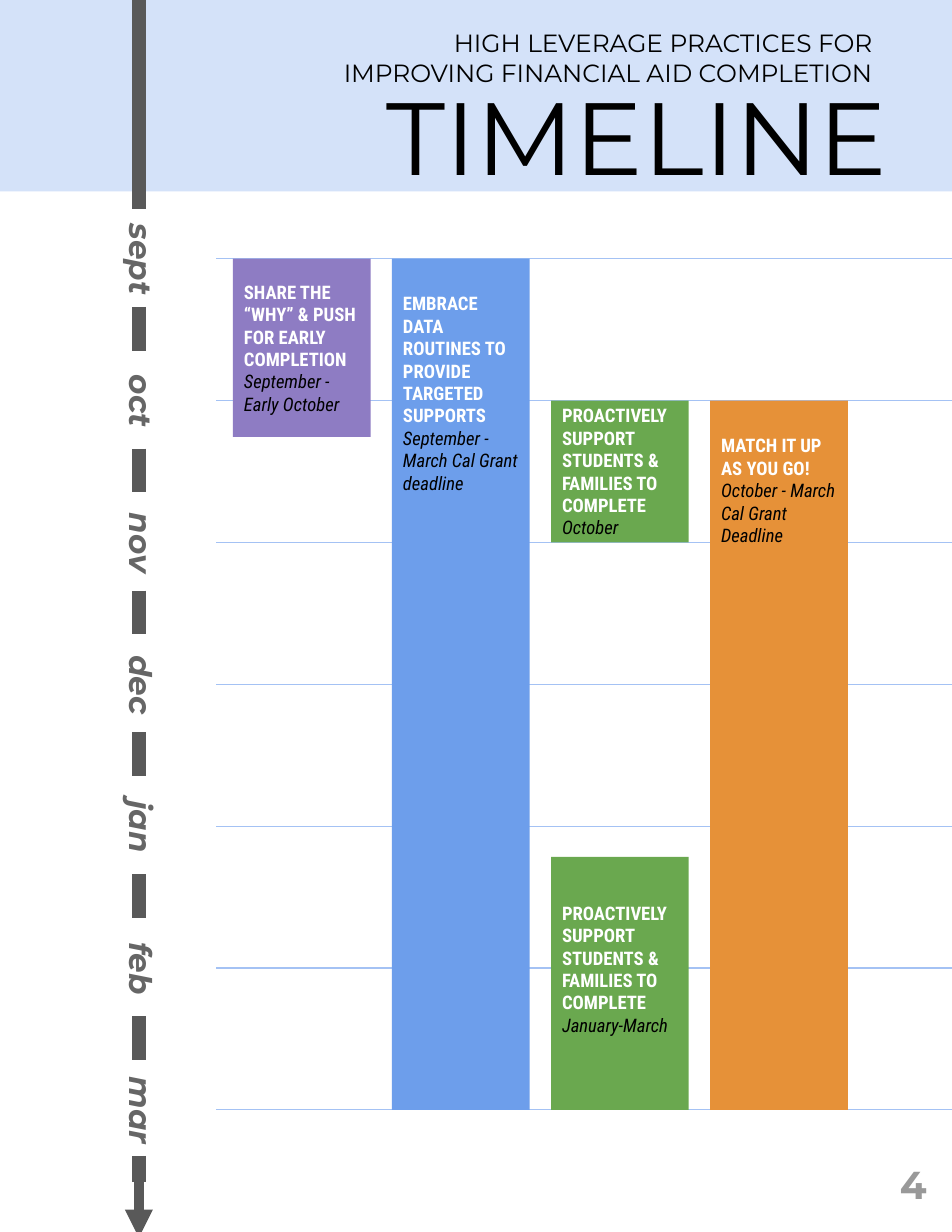
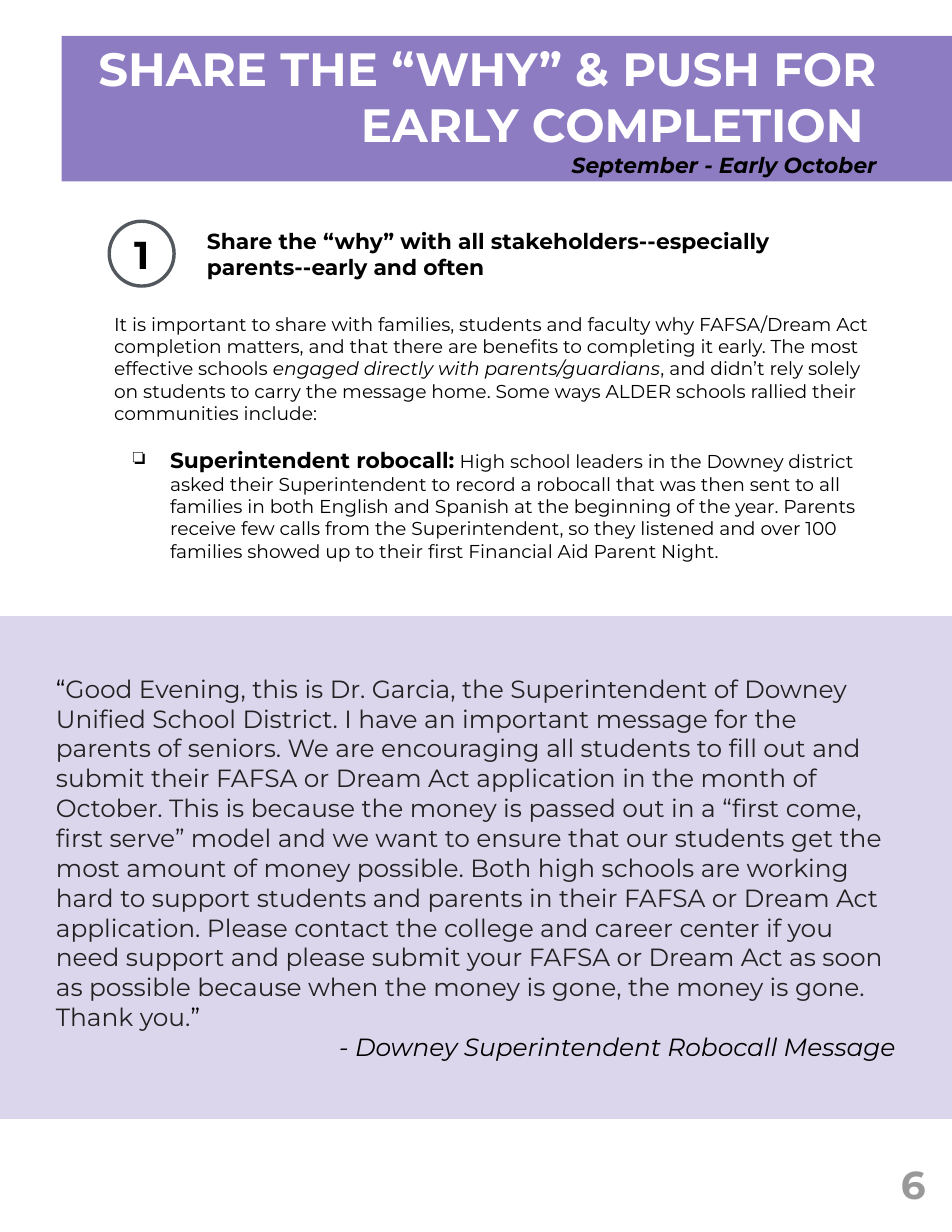
from lxml.etree import SubElement
from pptx import Presentation
from pptx.dml.color import RGBColor
from pptx.enum.shapes import MSO_CONNECTOR, MSO_SHAPE
from pptx.enum.text import MSO_ANCHOR, PP_ALIGN
from pptx.oxml.ns import qn
from pptx.util import Inches, Pt

PURPLE, BLUE, GREEN, ORANGE = "8E7CC3", "6D9EEB", "6AA84F", "E69138"
PALE_BLUE, SPINE, RING = "A4C2F4", "595959", "53585F"
BLACK, INK, WHITE, MONTH_GRAY, PAGE_GRAY = "000000", "222222", "FFFFFF", "666666", "999999"
HEADING_FONT, BAR_FONT = "Montserrat", "Roboto Condensed"
MONTHS = ["sept", "oct", "nov", "dec", "jan", "feb", "mar"]
GRID_TOP, GRID_BOTTOM = 2.31, 9.91
MONTH_STEP = (GRID_BOTTOM - GRID_TOP) / (len(MONTHS) - 1)
SPINE_X = 1.24
LEFT, CENTER, RIGHT = PP_ALIGN.LEFT, PP_ALIGN.CENTER, PP_ALIGN.RIGHT
TOP, MIDDLE = MSO_ANCHOR.TOP, MSO_ANCHOR.MIDDLE


def color(value):
    """Turn a hex string into a colour."""
    return RGBColor.from_string(value)


def piece(text, size, ink=BLACK, bold=False, italic=False, font=HEADING_FONT):
    """Describe one evenly styled stretch of text."""
    return text, size, ink, bold, italic, font


def write(shape, paragraphs, align=LEFT, anchor=TOP, insets=(0.1, 0.1, 0.1, 0.1)):
    """Fill a shape with paragraphs, each a list of pieces."""
    frame = shape.text_frame
    frame.word_wrap = True
    frame.vertical_anchor = anchor
    frame.margin_left, frame.margin_top, frame.margin_right, frame.margin_bottom = map(Inches, insets)
    for index, pieces in enumerate(paragraphs):
        paragraph = frame.add_paragraph() if index else frame.paragraphs[0]
        paragraph.alignment = align
        for text, size, ink, bold, italic, font in pieces:
            run = paragraph.add_run()
            run.text = text
            run.font.size = Pt(size)
            run.font.name = font
            run.font.bold = bold
            run.font.italic = italic
            run.font.color.rgb = color(ink)
    return frame


def add_text(slide, box, paragraphs, **layout):
    """Add a text box."""
    label = slide.shapes.add_textbox(*map(Inches, box))
    write(label, paragraphs, **layout)
    return label


def add_block(slide, box, fill, opacity=100, kind=MSO_SHAPE.RECTANGLE):
    """Add a filled shape without outline."""
    block = slide.shapes.add_shape(kind, *map(Inches, box))
    block.shadow.inherit = False
    block.line.fill.background()
    block.fill.solid()
    block.fill.fore_color.rgb = color(fill)
    if opacity < 100:
        tint = block.fill._xPr.find(qn("a:solidFill"))[0]
        SubElement(tint, qn("a:alpha"), val=str(opacity * 1000))
    return block


def add_line(slide, start, end, ink, width, arrow=False):
    """Add a straight line, with an arrowhead at its end if wanted."""
    line = slide.shapes.add_connector(MSO_CONNECTOR.STRAIGHT, *map(Inches, start + end))
    line.line.color.rgb = color(ink)
    line.line.width = Pt(width)
    if arrow:
        SubElement(line.line._get_or_add_ln(), qn("a:tailEnd"), type="triangle")
    SubElement(line._element.spPr, qn("a:effectLst"))


def add_spine(slide, top, bottom, width=9, arrow=False):
    """Add one upright stretch of the month axis."""
    add_line(slide, (SPINE_X, top), (SPINE_X, bottom), SPINE, width, arrow)


def add_bar(slide, column, top, bottom, fill, practice, period, inset, anchor=TOP):
    """Add one practice bar in its column."""
    bar = add_block(slide, (2.08 + 1.42 * column, top, 1.23, bottom - top), fill)
    paragraphs = [
        [piece(practice, 12, WHITE, bold=True, font=BAR_FONT)],
        [piece(period, 12, italic=True, font=BAR_FONT)],
    ]
    write(bar, paragraphs, anchor=anchor, insets=(0.1, inset, 0.1, inset if anchor == MIDDLE else 0))


def add_page_number(slide, number):
    """Add the page number in the lower right corner."""
    add_text(slide, (7.81, 10.15, 0.69, 0.85), [[piece(number, 25, PAGE_GRAY, bold=True)]],
             align=CENTER, anchor=MIDDLE)


def set_indent(paragraph, left, first=0.0, bullet=None):
    """Indent a paragraph and give it a bullet if wanted."""
    properties = paragraph._p.get_or_add_pPr()
    properties.set("marL", str(Inches(left)))
    properties.set("indent", str(Inches(first)))
    if bullet:
        bullet_ink = SubElement(properties, qn("a:buClr"))
        SubElement(bullet_ink, qn("a:srgbClr"), val=BLACK)
        SubElement(properties, qn("a:buChar"), char=bullet)


def build_timeline(slide):
    """Build the month-by-month timeline."""
    add_block(slide, (0, 0, 8.5, 1.71), PALE_BLUE, opacity=47)
    for index, month in enumerate(MONTHS):
        offset = index * MONTH_STEP
        label = add_text(slide, (0.24, 2.02 + offset, 1.99, 0.59),
                         [[piece(month, 20, MONTH_GRAY, bold=True, italic=True)]], align=CENTER)
        label.rotation = 90
        add_line(slide, (1.93, GRID_TOP + offset), (8.5, GRID_TOP + offset), PALE_BLUE, 0.75)
        if index < len(MONTHS) - 1:
            add_spine(slide, 2.74 + offset, 3.13 + offset)
    add_spine(slide, 0, 1.87)
    add_spine(slide, 10.32, 11.05, width=6, arrow=True)
    add_spine(slide, 10.32, 10.55)

    title_insets = (0.1, 0.05, 0.1, 0.05)
    add_text(slide, (2.82, 0.6, 5.2, 0.67), [[piece("TIMELINE", 66)]], align=RIGHT, insets=title_insets)
    add_text(slide, (2.69, 0.2, 5.2, 0.2),
             [[piece("HIGH LEVERAGE PRACTICES FOR IMPROVING FINANCIAL AID COMPLETION", 16)]],
             align=RIGHT, insets=title_insets)

    october, november = GRID_TOP + MONTH_STEP, GRID_TOP + 2 * MONTH_STEP
    support = "PROACTIVELY SUPPORT STUDENTS & FAMILIES TO COMPLETE"
    add_bar(slide, 0, GRID_TOP, 3.9, PURPLE, "SHARE THE “WHY” & PUSH FOR EARLY COMPLETION",
            "September - Early October", 0.1, MIDDLE)
    add_bar(slide, 1, GRID_TOP, GRID_BOTTOM, BLUE, "EMBRACE DATA ROUTINES TO PROVIDE TARGETED SUPPORTS",
            "September - March Cal Grant deadline", 0.3)
    add_bar(slide, 2, october, november, GREEN, support, "October", 0, MIDDLE)
    add_bar(slide, 2, 7.65, GRID_BOTTOM, GREEN, support, "January-March", 0.4)
    add_bar(slide, 3, october, GRID_BOTTOM, ORANGE, "MATCH IT UP AS YOU GO!",
            "October - March Cal Grant Deadline", 0.3)
    add_page_number(slide, "4")


def build_practice(slide):
    """Build the page on the first practice."""
    banner = add_block(slide, (0.55, 0.32, 7.95, 1.3), PURPLE)
    write(banner, [
        [piece("SHARE THE “WHY” & PUSH FOR EARLY COMPLETION ", 30, WHITE, bold=True)],
        [piece("September - Early October", 14, bold=True, italic=True)],
    ], align=RIGHT, anchor=MIDDLE, insets=(0.1, 0.1, 0.67, 0.1))

    ring = add_block(slide, (0.96, 1.96, 0.61, 0.61), RING, kind=MSO_SHAPE.DONUT)
    ring.adjustments[0] = 0.05
    add_text(slide, (0.92, 1.84, 0.69, 0.85), [[piece("1", 25, bold=True)]], align=CENTER, anchor=MIDDLE)
    add_text(slide, (1.75, 1.84, 6.06, 0.85),
             [[piece("Share the “why” with all stakeholders--especially parents--early and often", 14, bold=True)]],
             anchor=MIDDLE)

    advice = add_text(slide, (0.92, 2.69, 6.95, 2.37), [
        [piece("It is important to share with families, students and faculty why FAFSA/Dream Act "
               "completion matters, and that there are benefits to completing it early. "
               "The most effective schools ", 12),
         piece("engaged directly with parents/guardians", 12, italic=True),
         piece(", and didn’t rely solely on students to carry the message home. "
               "Some ways ALDER schools rallied their communities include:", 12)],
        [piece("Superintendent robocall:", 14, bold=True),
         piece(" High school leaders in the Downey district asked their Superintendent to record a "
               "robocall that was then sent to all families in both English and Spanish at the beginning "
               "of the year. Parents receive few calls from the Superintendent, so they listened and over "
               "100 families showed up to their first Financial Aid Parent Night.", 12)],
    ])
    robocall = advice.text_frame.paragraphs[1]
    robocall.space_before = Pt(14)
    set_indent(robocall, 0.5, -0.33, "❏")

    quote = add_block(slide, (0, 5.5, 8.5, 4.49), PURPLE, opacity=31)
    message = write(quote, [
        [piece("“", 16),
         piece("Good Evening, this is Dr. Garcia, the Superintendent of Downey Unified School District. "
               "I have an important message for the parents of seniors. We are encouraging all students to "
               "fill out and submit their FAFSA or Dream Act application in the month of October. This is "
               "because the money is passed out in a “first come, first serve” model and we want to ensure "
               "that our students get the most amount of money possible. Both high schools are working hard "
               "to support students and parents in their FAFSA or Dream Act application. Please contact the "
               "college and career center if you need support and please submit your FAFSA or Dream Act as "
               "soon as possible because when the money is gone, the money is gone. Thank you.", 16, INK),
         piece("”", 16)],
        [piece("- Downey Superintendent Robocall Message", 16, italic=True)],
    ], anchor=MIDDLE, insets=(0.5, 0.05, 0.5, 0.05))
    speaker = message.paragraphs[1]
    speaker.alignment = RIGHT
    set_indent(speaker, 0.5)
    add_page_number(slide, "6")


def main():
    """Build and save the two pages."""
    deck = Presentation()
    deck.slide_width, deck.slide_height = Inches(8.5), Inches(11)
    for build in (build_timeline, build_practice):
        build(deck.slides.add_slide(deck.slide_layouts[6]))
    deck.save("out.pptx")


if __name__ == "__main__":
    main()
